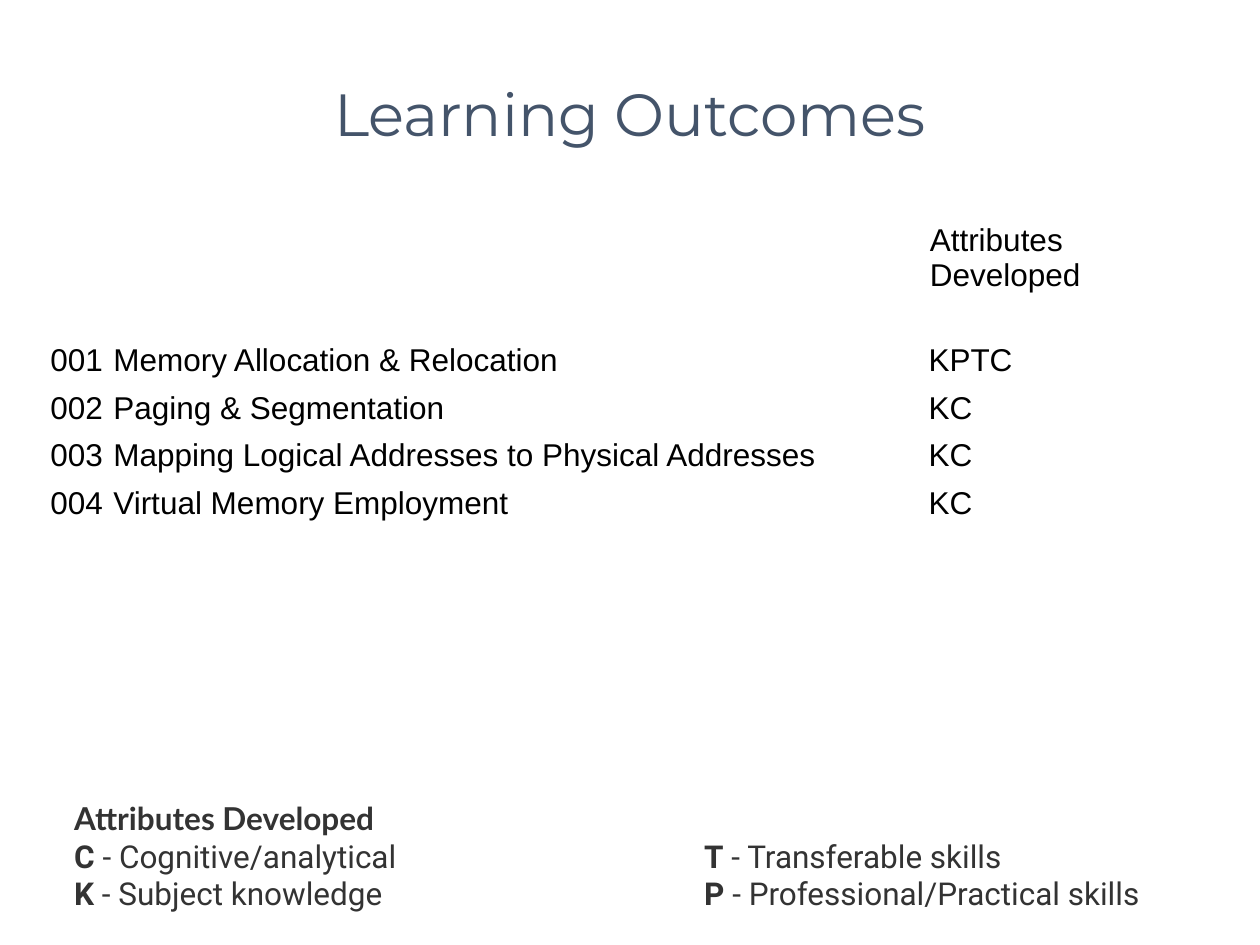
from lxml import etree
from pptx import Presentation
from pptx import util as u
from pptx.dml.color import RGBColor
from pptx.enum import text
from pptx.oxml.ns import qn

SLATE = RGBColor(0x44, 0x54, 0x6A)
GREY = RGBColor(0x33, 0x33, 0x33)
BLACK = RGBColor(0, 0, 0)

TITLE = "Learning Outcomes"
ROWS = [
    ("", "", "Attributes Developed"),
    ("001", "Memory Allocation & Relocation", "KPTC"),
    ("002", "Paging & Segmentation", "KC"),
    ("003", "Mapping Logical Addresses to Physical Addresses", "KC"),
    ("004", "Virtual Memory Employment", "KC"),
]
COL_WIDTHS = [0.5, 6.47, 2.3]
ROW_HEIGHTS = [0.93] + [0.38] * (len(ROWS) - 1)
KEY_HEADING = "Attributes Developed"
KEY = [
    [("C", "Cognitive/analytical"), ("T", "Transferable skills")],
    [("K", "Subject knowledge"), ("P", "Professional/Practical skills")],
]
KEY_TAB = 5


def style(r, font, size, color, bold=False):
    r.font.name = font
    r.font.size = u.Pt(size)
    r.font.color.rgb = color
    r.font.bold = bold


def add_run(p, words, font, bold):
    r = p.add_run()
    r.text = words
    style(r, font, 18, GREY, bold)


def add_title(s):
    sp = s.shapes.title
    sp.left, sp.top, sp.width, sp.height = map(u.Inches, (0.5, 0.3, 9, 1.25))
    tf = sp.text_frame
    tf.text = TITLE
    tf.vertical_anchor = text.MSO_ANCHOR.MIDDLE
    p = tf.paragraphs[0]
    p.alignment = text.PP_ALIGN.CENTER
    p.line_spacing = u.Pt(36)
    style(p.runs[0], "Montserrat", 34, SLATE)


def add_outcomes(s):
    table = s.shapes.add_table(
        len(ROWS), len(COL_WIDTHS), u.Inches(0.36), u.Inches(1.75),
        u.Inches(sum(COL_WIDTHS)), u.Inches(sum(ROW_HEIGHTS))).table
    table.first_row = table.horz_banding = False
    for col, width in zip(table.columns, COL_WIDTHS):
        col.width = u.Inches(width)
    for i, (row, height) in enumerate(zip(table.rows, ROW_HEIGHTS)):
        row.height = u.Inches(height)
        side, edge = (0.05, 0.02) if i == 0 else (0.04, 0.04)
        for cell, words in zip(row.cells, ROWS[i]):
            cell.fill.background()
            cell.margin_left = cell.margin_right = u.Inches(side)
            cell.margin_top = cell.margin_bottom = u.Inches(edge)
            if words:
                cell.text_frame.text = words
                style(cell.text_frame.paragraphs[0].runs[0], "Arial", 18, BLACK)


def add_key(s):
    sp = s.shapes.add_textbox(*map(u.Inches, (0.49, 6.29, 8.75, 1.01)))
    tf = sp.text_frame
    tf.word_wrap = True
    tf.auto_size = text.MSO_AUTO_SIZE.SHAPE_TO_FIT_TEXT
    add_run(tf.paragraphs[0], KEY_HEADING, "Lato", True)
    for pair in KEY:
        p = tf.add_paragraph()
        tabs = etree.SubElement(p._p.get_or_add_pPr(), qn("a:tabLst"))
        etree.SubElement(tabs, qn("a:tab"), pos=str(u.Inches(KEY_TAB)), algn="l")
        for i, (letter, meaning) in enumerate(pair):
            gap = "\t" if i < len(pair) - 1 else ""
            add_run(p, letter, "Roboto", True)
            add_run(p, f" - {meaning}{gap}", "Roboto", False)


def main():
    prs = Presentation()
    prs.slide_width, prs.slide_height = u.Inches(10), u.Inches(7.5)
    s = prs.slides.add_slide(prs.slide_layouts[5])
    add_title(s)
    add_key(s)
    add_outcomes(s)
    prs.save("out.pptx")


if __name__ == "__main__":
    main()
